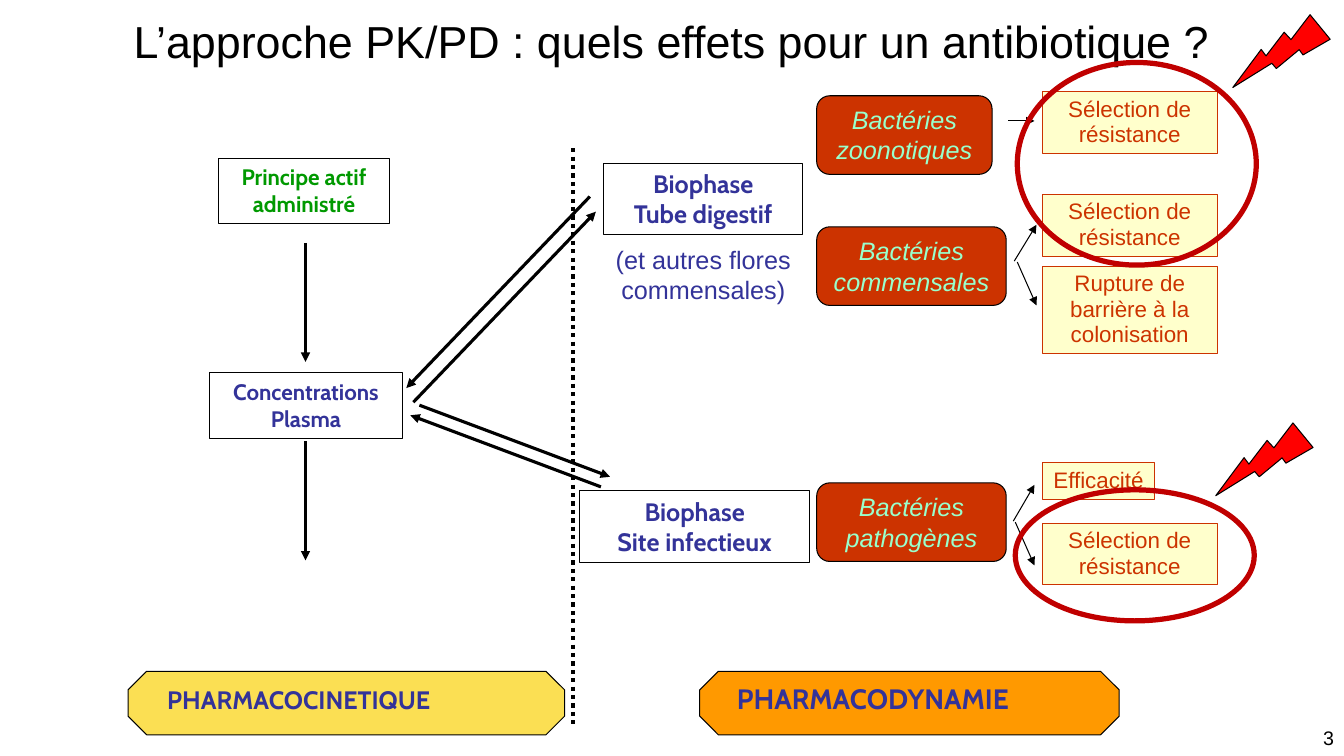
from lxml.etree import SubElement as Sub
from pptx import Presentation
from pptx.dml.color import RGBColor
from pptx.enum.dml import MSO_LINE as Dash
from pptx.enum.shapes import MSO_CONNECTOR as Conn, MSO_SHAPE as Form
from pptx.enum.text import MSO_ANCHOR as Anchor, PP_ALIGN as Align
from pptx.oxml.ns import qn
from pptx.util import Pt

PX = 9144
INK, NAVY, RED, RUST = "000000", "333399", "C00000", "CC3300"


def hue(code):
    return RGBColor.from_string(code)


def emu(*vals):
    return [round(val * PX) for val in vals]


class Board:
    looks = {
        "title": (INK, dict(name="Arial", size=Pt(32), bold=False)),
        "page": (INK, dict(name="Arial", size=Pt(14))),
        "drug": ("009900", dict(name="Cabin", size=Pt(16), bold=True)),
        "plasma": (NAVY, dict(name="Cabin", size=Pt(16), bold=True)),
        "phase": (NAVY, dict(name="Cabin", size=Pt(18), bold=True)),
        "large": (NAVY, dict(name="Cabin", size=Pt(20), bold=True)),
        "note": (NAVY, dict(name="Arial", size=Pt(18))),
        "germ": ("99FFCC", dict(name="Arial", size=Pt(18), italic=True)),
        "effect": (RUST, dict(name="Arial", size=Pt(16))),
    }

    def __init__(self, deck):
        self.slide = deck.slides.add_slide(deck.slide_layouts[5])
        self.shapes = self.slide.shapes

    def letter(self, shape, text, look, align=Align.CENTER, wrap=True,
               anchor=Anchor.TOP, space=1.0):
        frame = shape.text_frame
        frame.text = text
        frame.word_wrap = wrap
        frame.vertical_anchor = anchor
        code, form = self.looks[look]
        for para in frame.paragraphs:
            para.alignment = align
            para.line_spacing = space
            for run in para.runs:
                run.font.color.rgb = hue(code)
                for key, val in form.items():
                    setattr(run.font, key, val)

    def title(self, box, text):
        shape = self.shapes.title
        for key, val in zip(("left", "top", "width", "height"), emu(*box)):
            setattr(shape, key, val)
        self.letter(shape, text, "title", anchor=Anchor.MIDDLE)

    def label(self, box, text, look, align=Align.CENTER):
        shape = self.shapes.add_textbox(*emu(*box))
        self.letter(shape, text, look, align)
        return shape

    def shape(self, form, box, fill=None, edge=INK, width=0.75, turn=0):
        shape = self.shapes.add_shape(form, *emu(*box))
        shape.shadow.inherit = False
        shape.rotation = turn
        if fill:
            shape.fill.solid()
            shape.fill.fore_color.rgb = hue(fill)
        else:
            shape.fill.background()
        shape.line.color.rgb = hue(edge)
        shape.line.width = Pt(width)
        return shape

    def card(self, box, text, look, wrap=True):
        shape = self.shape(Form.RECTANGLE, box, "FFFFFF")
        self.letter(shape, text, look, wrap=wrap)

    def germ(self, top, width, text):
        shape = self.shape(Form.ROUNDED_RECTANGLE, (810, top, width, 78), RUST)
        self.letter(shape, text, "germ")

    def effect(self, top, size, text, wrap=True):
        shape = self.shape(Form.RECTANGLE, (1034, top, *size), "FFFFCC", RUST, 0.5)
        self.letter(shape, text, "effect", wrap=wrap, space=0.95)

    def banner(self, box, fill, spot, text, look):
        plate = self.shape(Form.OCTAGON, box, fill)
        plate.adjustments[0] = 0.293
        name = self.label(spot, text, look, Align.LEFT)
        self.shapes.add_group_shape([plate, name])

    def line(self, ends, width, dash=None):
        link = self.shapes.add_connector(Conn.STRAIGHT, *emu(*ends))
        link.line.color.rgb = hue(INK)
        link.line.width = Pt(width)
        props = link._element.spPr
        if dash:
            link.line.dash_style = dash
        else:
            Sub(props.find(qn("a:ln")), qn("a:tailEnd"), type="triangle")
        Sub(props, qn("a:effectLst"))


def main():
    deck = Presentation()
    deck.slide_width, deck.slide_height = emu(1333, 750)
    board = Board(deck)
    board.title((104, 4, 1125, 73), "L’approche PK/PD : quels effets pour un antibiotique ?")

    board.banner((694, 666, 416, 63), "FF9900", (721, 671, 318, 43),
                 "PHARMACODYNAMIE", "large")
    board.banner((127, 666, 433, 63), "FBDF53", (156, 674, 314, 40),
                 "PHARMACOCINETIQUE", "phase")
    board.line((568, 147, 568, 722), 3, Dash.ROUND_DOT)

    board.card((217, 157, 169, 65), "Principe actif\nadministré", "drug", False)
    board.card((208, 370, 191, 65), "Concentrations\nPlasma", "plasma", False)
    board.card((599, 162, 197, 71), "Biophase\nTube digestif", "phase")
    board.card((575, 487, 228, 71), "Biophase\nSite infectieux", "phase")
    board.label((599, 237, 197, 71), "(et autres flores commensales)", "note")

    for top, width, kind in ((95, 174, "zoonotiques"), (225, 188, "commensales"),
                             (479, 188, "pathogènes")):
        board.germ(top, width, f"Bactéries {kind}")

    for top in (91, 193, 519):
        board.effect(top, (173, 61), "Sélection de résistance")
    board.effect(264, (173, 87), "Rupture de barrière à la colonisation")
    board.effect(459, (111, 36), "Efficacité", False)

    for ends in ((303, 241, 303, 359), (303, 438, 303, 556),
                 (410, 399, 591, 210), (585, 195, 403, 385),
                 (416, 402, 605, 473), (596, 483, 407, 412)):
        board.line(ends, 2.25)
    for ends in ((1000, 120, 1026, 120),
                 (1006, 259, 1028, 223), (1009, 260, 1028, 303),
                 (1005, 517, 1026, 481), (1007, 518, 1026, 561)):
        board.line(ends, 0.75)

    for ring in ((1007, 486, 237, 130), (1009, 62, 237, 201)):
        board.shape(Form.OVAL, ring, edge=RED, width=3.75)
    for left, top in ((1220, 405), (1237, 0)):
        board.shape(Form.LIGHTNING_BOLT, (left, top, 66, 100), "FF0000", turn=85.5)
    board.label((989, 715, 344, 35), "3", "page", Align.RIGHT)
    deck.save("out.pptx")


if __name__ == "__main__":
    main()
